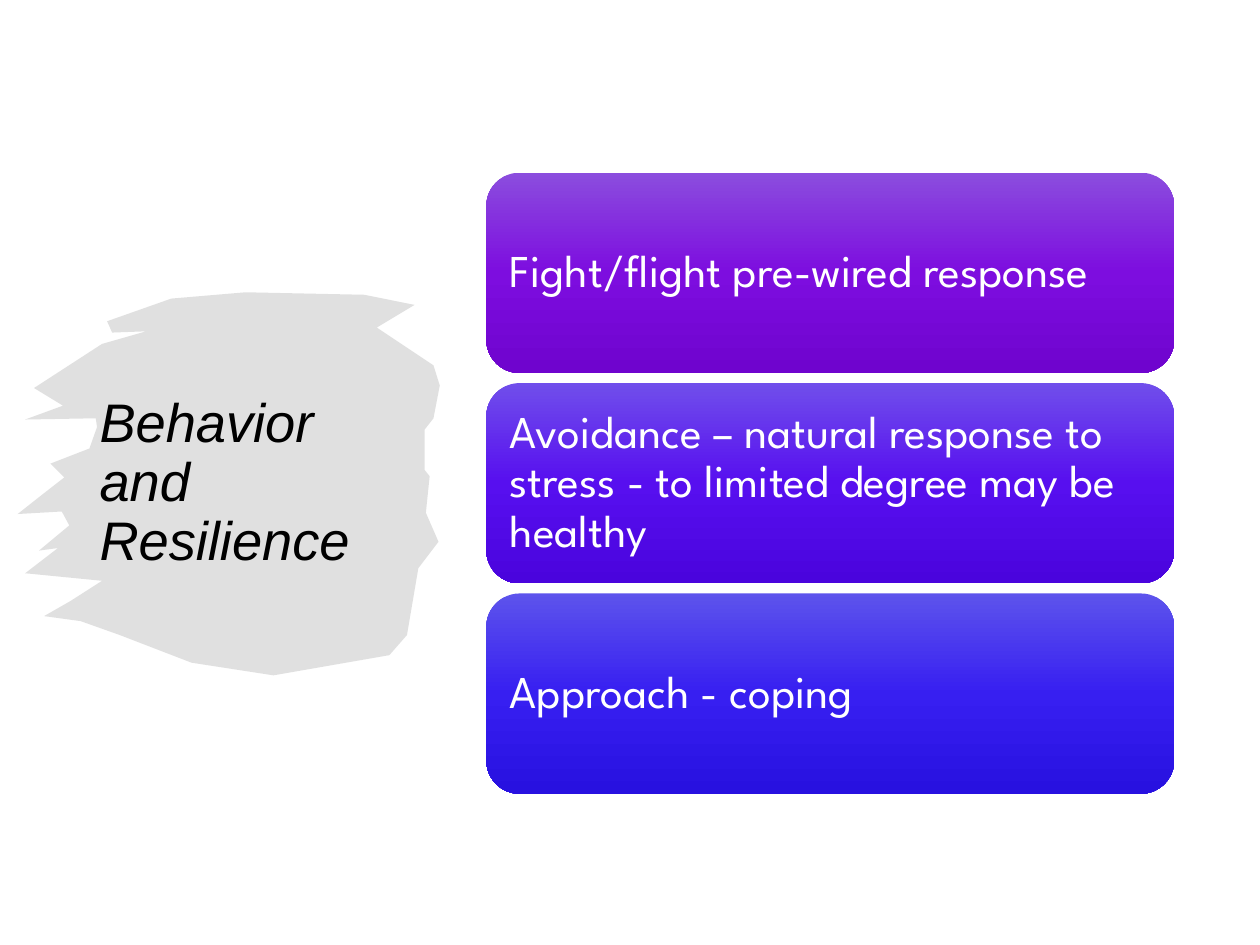
"""Build the Behavior and Resilience slide."""
from copy import deepcopy

from pptx import Presentation
from pptx import util as u
from pptx.dml.color import RGBColor
from pptx.enum import shapes, text
from pptx.oxml.ns import qn
from lxml import etree

PX = u.Inches(1) // 100
BLACK = RGBColor(0x00, 0x00, 0x00)
WHITE = RGBColor(0xFF, 0xFF, 0xFF)
GRAY = RGBColor(0xD9, 0xD9, 0xD9)
PURPLES = [RGBColor(0x8B, 0x4D, 0xDE), RGBColor(0x7D, 0x0D, 0xDF), RGBColor(0x6F, 0x04, 0xCE)]
VIOLETS = [RGBColor(0x70, 0x4E, 0xEB), RGBColor(0x57, 0x0F, 0xEF), RGBColor(0x4A, 0x04, 0xDD)]
BLUES = [RGBColor(0x5D, 0x53, 0xEC), RGBColor(0x37, 0x1F, 0xF1), RGBColor(0x28, 0x11, 0xE0)]

BRUSH = [
    (195, 232), (289, 234), (329, 242), (299, 260), (344, 290), (349, 306),
    (344, 332), (337, 341), (337, 373), (341, 378), (338, 407), (348, 430),
    (332, 451), (323, 504), (309, 520), (217, 536), (152, 526), (95, 504),
    (64, 493), (35, 489), (56, 477), (81, 461), (20, 455), (46, 435),
    (31, 437), (55, 417), (49, 406), (14, 408), (33, 393), (51, 379),
    (40, 368), (71, 356), (77, 339), (76, 332), (20, 333), (50, 322),
    (27, 308), (81, 273), (116, 263), (89, 264), (85, 255), (136, 237),
]
CARDS = [
    ("Fight/flight pre-wired response", PURPLES),
    ("Avoidance – natural response to stress - to limited degree may be healthy", VIOLETS),
    ("Approach - coping", BLUES),
]
CARD_LEFT, CARD_TOP, CARD_WIDTH, CARD_HEIGHT, CARD_STEP = 386, 137, 546, 159, 167
CARD_INSET = 11


def style_text(tf, font, size, color, italic=False):
    tf.word_wrap = True
    tf.auto_size = text.MSO_AUTO_SIZE.NONE
    tf.vertical_anchor = text.MSO_ANCHOR.MIDDLE
    p = tf.paragraphs[0]
    p.alignment = text.PP_ALIGN.LEFT
    p.line_spacing = 0.9
    r = p.runs[0]
    r.font.name = font
    r.font.size = u.Pt(size)
    r.font.italic = italic
    r.font.color.rgb = color


prs = Presentation()
prs.slide_width, prs.slide_height = 1000 * PX, 750 * PX
s = prs.slides.add_slide(prs.slide_layouts[5])

builder = s.shapes.build_freeform(*BRUSH[0], scale=PX)
builder.add_line_segments(BRUSH[1:], close=True)
brush = builder.convert_to_shape()
brush.shadow.inherit = False
brush.fill.solid()
brush.fill.fore_color.rgb = GRAY
brush.line.fill.background()
color = brush._element.spPr.find(".//" + qn("a:srgbClr"))
etree.SubElement(color, qn("a:alpha"), val="80000")

title = s.shapes.title
title.left, title.top, title.width, title.height = 69 * PX, 164 * PX, 264 * PX, 440 * PX
title.text_frame.text = "Behavior and Resilience"
style_text(title.text_frame, "Arial", 31, BLACK, italic=True)
s.shapes._spTree.append(title._element)

for i, (label, colors) in enumerate(CARDS):
    sp = s.shapes.add_shape(
        shapes.MSO_SHAPE.ROUNDED_RECTANGLE, CARD_LEFT * PX, (CARD_TOP + i * CARD_STEP) * PX,
        CARD_WIDTH * PX, CARD_HEIGHT * PX)
    sp.shadow.inherit = False
    sp.line.fill.background()
    sp.fill.gradient()
    sp.fill.gradient_angle = 270
    first = sp._element.spPr.find(".//" + qn("a:gs"))
    first.addnext(deepcopy(first))
    for stop, position, rgb in zip(sp.fill.gradient_stops, (0, 0.5, 1), colors):
        stop.position = position
        stop.color.rgb = rgb
    tf = sp.text_frame
    tf.margin_left = tf.margin_right = tf.margin_top = tf.margin_bottom = CARD_INSET * PX
    tf.text = label
    style_text(tf, "League Spartan", 26, WHITE)

prs.save("out.pptx")
